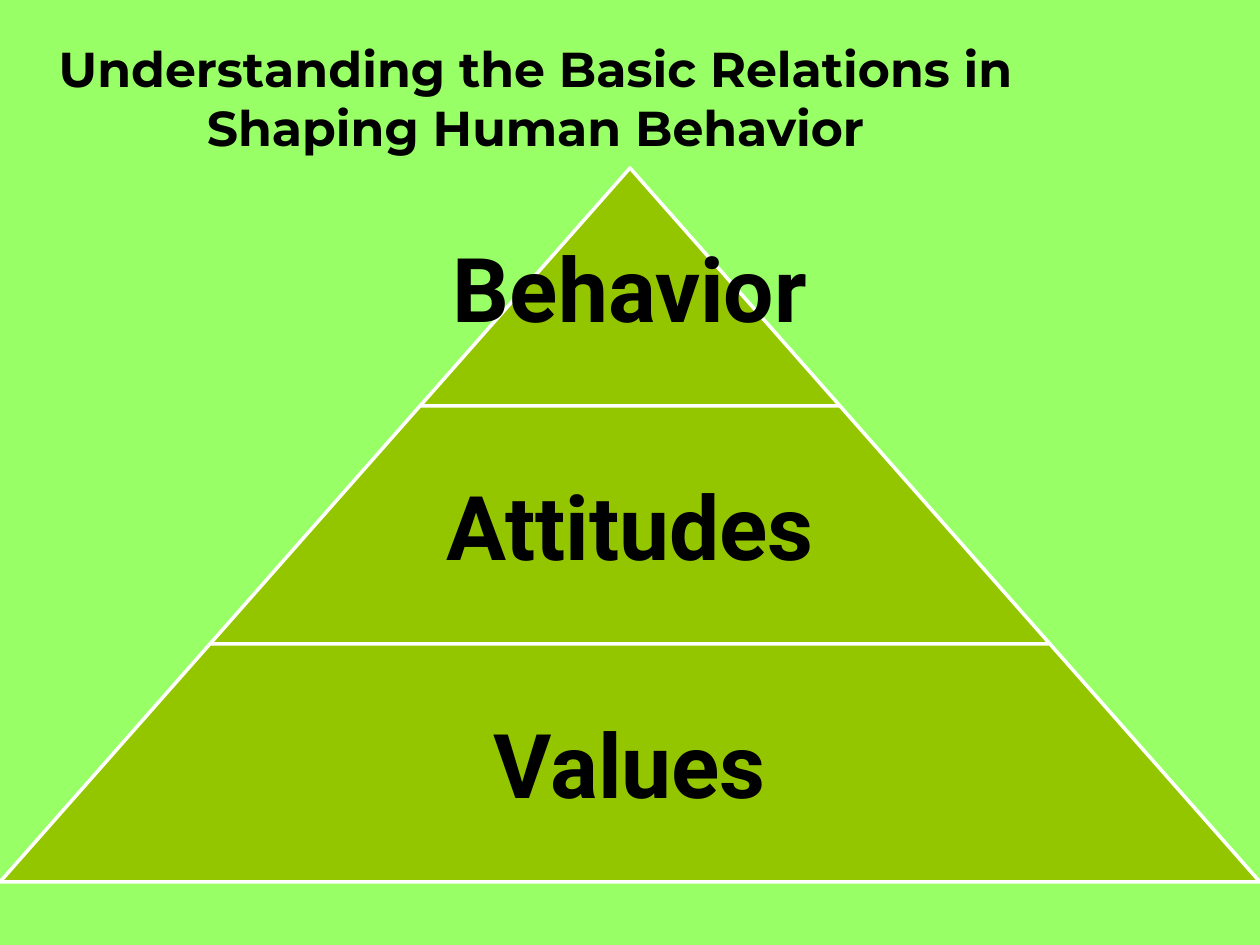
"""Build a slide with a three-tier pyramid of human behavior."""
from dataclasses import dataclass

from pptx import Presentation
from pptx.dml.color import RGBColor
from pptx.enum.shapes import MSO_SHAPE
from pptx.enum.text import MSO_ANCHOR, MSO_AUTO_SIZE, PP_ALIGN
from pptx.shapes.group import GroupShape
from pptx.text.text import TextFrame
from pptx.util import Emu, Pt

EMU_PER_PX = 914400 / 126
SLIDE_W, SLIDE_H = 1260, 945
TOP, TIER_H, STEP = 168, 238, 420
INSET = 9
COLORS = {"bg": "99FF66", "tier": "94C600", "line": "FFFFFF", "text": "000000"}


@dataclass
class Tier:
    label: str
    level: int
    text_w: int


TIERS = [
    Tier("Behavior", 1, 420),
    Tier("Attitudes", 2, 546),
    Tier("Values", 3, 819),
]


def px(n: float) -> Emu:
    return Emu(round(n * EMU_PER_PX))


def color(name: str) -> RGBColor:
    return RGBColor.from_string(COLORS[name])


def set_text(tf: TextFrame, text: str, font: str, size: int) -> None:
    tf.text = text
    tf.word_wrap = True
    tf.vertical_anchor = MSO_ANCHOR.MIDDLE
    p = tf.paragraphs[0]
    p.alignment = PP_ALIGN.CENTER
    r = p.runs[0]
    r.font.name = font
    r.font.size = Pt(size)
    r.font.bold = True
    r.font.color.rgb = color("text")


def add_tier(group: GroupShape, tier: Tier) -> None:
    width = tier.level * STEP
    top = px(TOP + (tier.level - 1) * TIER_H)
    sp = group.shapes.add_shape(
        MSO_SHAPE.TRAPEZOID, px((SLIDE_W - width) / 2), top, px(width), px(TIER_H)
    )
    sp.adjustments[0] = STEP / 2 / TIER_H
    sp.shadow.inherit = False
    sp.fill.solid()
    sp.fill.fore_color.rgb = color("tier")
    sp.line.color.rgb = color("line")
    sp.line.width = Pt(2)

    box = group.shapes.add_textbox(
        px((SLIDE_W - tier.text_w) / 2), top, px(tier.text_w), px(TIER_H)
    )
    tf = box.text_frame
    tf.margin_left = tf.margin_right = tf.margin_top = tf.margin_bottom = px(INSET)
    set_text(tf, tier.label, "Roboto", 51)


def main() -> None:
    prs = Presentation()
    prs.slide_width, prs.slide_height = px(SLIDE_W), px(SLIDE_H)
    s = prs.slides.add_slide(prs.slide_layouts[5])
    s.background.fill.solid()
    s.background.fill.fore_color.rgb = color("bg")

    title = s.shapes.title
    title.left, title.top, title.width, title.height = px(0), px(32), px(1071), px(130)
    set_text(
        title.text_frame,
        "Understanding the Basic Relations in Shaping Human Behavior",
        "Montserrat",
        28,
    )
    title.text_frame.auto_size = MSO_AUTO_SIZE.SHAPE_TO_FIT_TEXT

    pyramid = s.shapes.add_group_shape()
    for tier in TIERS:
        add_tier(pyramid, tier)

    prs.save("out.pptx")


if __name__ == "__main__":
    main()
